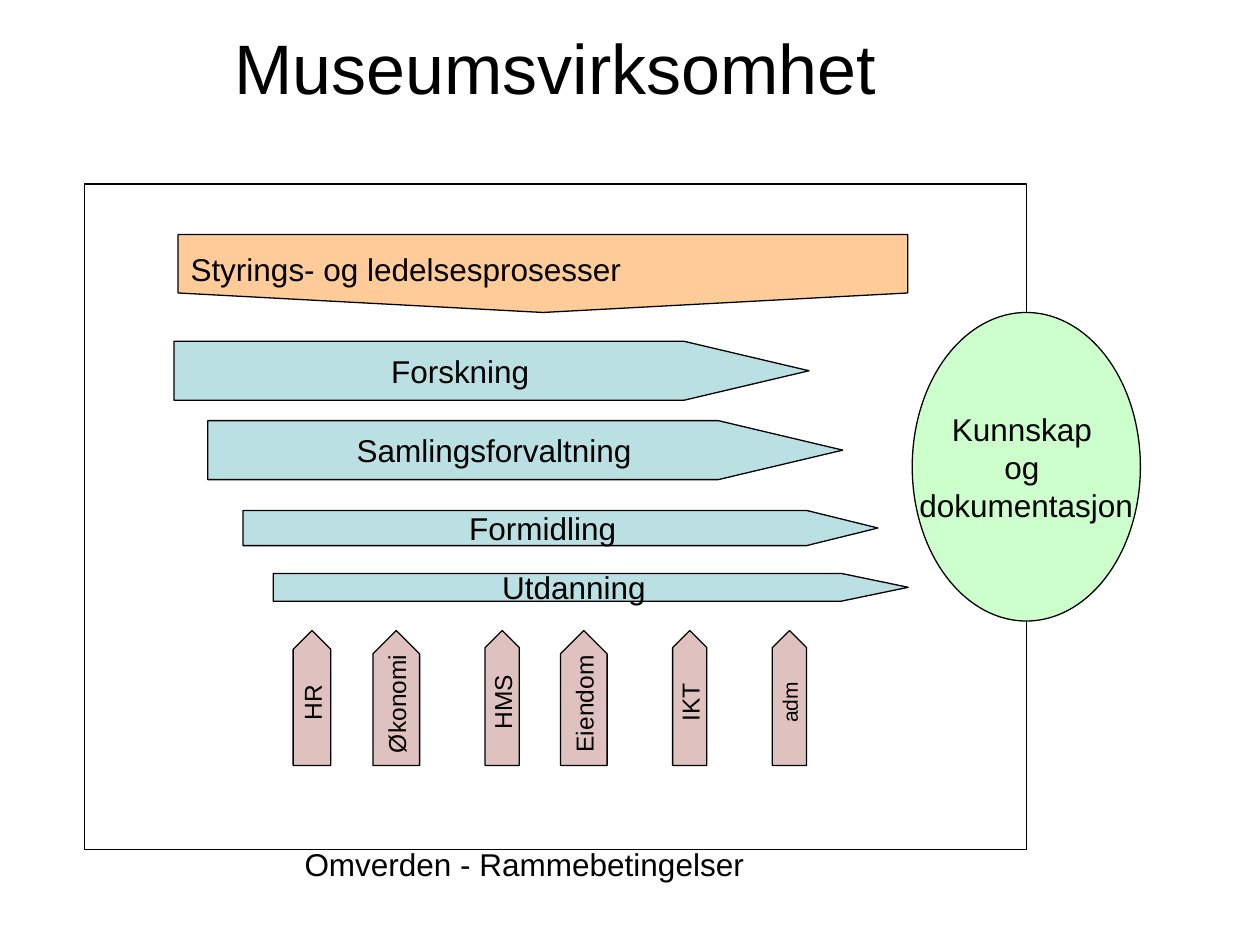
"""Build the slide on museum activity as a process map."""
from dataclasses import dataclass

from pptx import Presentation
from pptx.dml.color import RGBColor
from pptx.enum.shapes import MSO_SHAPE
from pptx.enum.text import MSO_ANCHOR, PP_ALIGN
from pptx.util import Cm, Pt

PENTAGON = MSO_SHAPE.PENTAGON
RECTANGLE = MSO_SHAPE.RECTANGLE
OVAL = MSO_SHAPE.OVAL
MIDDLE = MSO_ANCHOR.MIDDLE
TOP = MSO_ANCHOR.TOP
CENTER = PP_ALIGN.CENTER
LEFT = PP_ALIGN.LEFT


@dataclass(frozen=True)
class Theme:
    font: str = "Arial"
    ink: str = "000000"
    management: str = "FFCC99"
    process: str = "BBE0E3"
    support: str = "DFC2BF"
    result: str = "CCFFCC"
    title_size: int = 40
    body_size: int = 18
    support_size: int = 14
    small_size: int = 12
    line_width: float = 0.75


class ProcessMap:
    def __init__(self, slide, theme):
        self.slide = slide
        self.theme = theme

    def set_text(self, shape, text, size, align=CENTER, anchor=MIDDLE):
        frame = shape.text_frame
        frame.word_wrap = False
        frame.vertical_anchor = anchor
        frame.text = text
        for paragraph in frame.paragraphs:
            paragraph.alignment = align
            paragraph.font.name = self.theme.font
            paragraph.font.size = Pt(size)
            paragraph.font.color.rgb = RGBColor.from_string(self.theme.ink)

    def label(self, text, left, top, width, height, size, align=CENTER, anchor=MIDDLE):
        box = self.slide.shapes.add_textbox(Cm(left), Cm(top), Cm(width), Cm(height))
        self.set_text(box, text, size, align, anchor)

    def outline(self, kind, left, top, width, height, color=None):
        shape = self.slide.shapes.add_shape(kind, Cm(left), Cm(top), Cm(width), Cm(height))
        shape.shadow.inherit = False
        if color:
            shape.fill.solid()
            shape.fill.fore_color.rgb = RGBColor.from_string(color)
        else:
            shape.fill.background()
        shape.line.color.rgb = RGBColor.from_string(self.theme.ink)
        shape.line.width = Pt(self.theme.line_width)
        return shape

    def arrow(self, text, left, top, width, height, tip, color, size):
        shape = self.outline(PENTAGON, left, top, width, height, color)
        shape.adjustments[0] = tip
        self.set_text(shape, text, size)
        return shape

    def turned_arrow(self, text, left, top, width, height, tip, color, size, rotation):
        shift = (width - height) / 2
        shape = self.arrow(text, left + shift, top - shift, height, width, tip, color, size)
        shape.rotation = rotation
        return shape

    def banner(self, text, left, top, width, height):
        shape = self.turned_arrow(text, left, top, width, height, 0.25,
                                  self.theme.management, self.theme.body_size, 90)
        shape.text_frame.word_wrap = True
        shape.text_frame.paragraphs[0].alignment = LEFT
        shape.text_frame._txBody.bodyPr.set("vert", "vert270")

    def ellipse(self, text, left, top, width, height):
        shape = self.outline(OVAL, left, top, width, height, self.theme.result)
        self.set_text(shape, text, self.theme.body_size)


def main():
    theme = Theme()
    presentation = Presentation()
    presentation.slide_width = Cm(25.4)
    presentation.slide_height = Cm(19.05)
    slide = presentation.slides.add_slide(presentation.slide_layouts[6])
    process_map = ProcessMap(slide, theme)

    process_map.label("Museumsvirksomhet", 1.27, 0.76, 19.84, 1.17, theme.title_size)
    process_map.banner("Styrings- og ledelsesprosesser", 3.59, 4.73, 14.71, 1.57)

    processes = [
        ("Forskning", 3.51, 6.88, 1.19, 2.12),
        ("Samlingsforvaltning", 4.19, 8.48, 1.19, 2.11),
        ("Formidling", 4.9, 10.29, 0.71, 2.03),
        ("Utdanning", 5.51, 11.56, 0.56, 2.41),
    ]
    for text, left, top, height, tip in processes:
        process_map.arrow(text, left, top, 12.8, height, tip, theme.process, theme.body_size)

    support_functions = [
        ("HR", 5.91, 0.76, theme.support_size),
        ("Økonomi", 7.52, 0.94, theme.support_size),
        ("HMS", 9.78, 0.69, theme.support_size),
        ("Eiendom", 11.3, 0.94, theme.support_size),
        ("IKT", 13.56, 0.69, theme.support_size),
        ("adm", 15.57, 0.69, theme.small_size),
    ]
    for text, left, width, size in support_functions:
        process_map.turned_arrow(text, left, 12.71, width, 2.72, 0.5, theme.support, size, 270)

    process_map.outline(RECTANGLE, 1.7, 3.71, 19, 13.41)
    process_map.label("Omverden - Rammebetingelser", 5.89, 16.92, 9.37, 1.02,
                      theme.body_size, LEFT, TOP)
    process_map.ellipse("Kunnskap \nog \ndokumentasjon", 18.39, 6.3, 4.6, 6.22)

    presentation.save("out.pptx")


if __name__ == "__main__":
    main()
